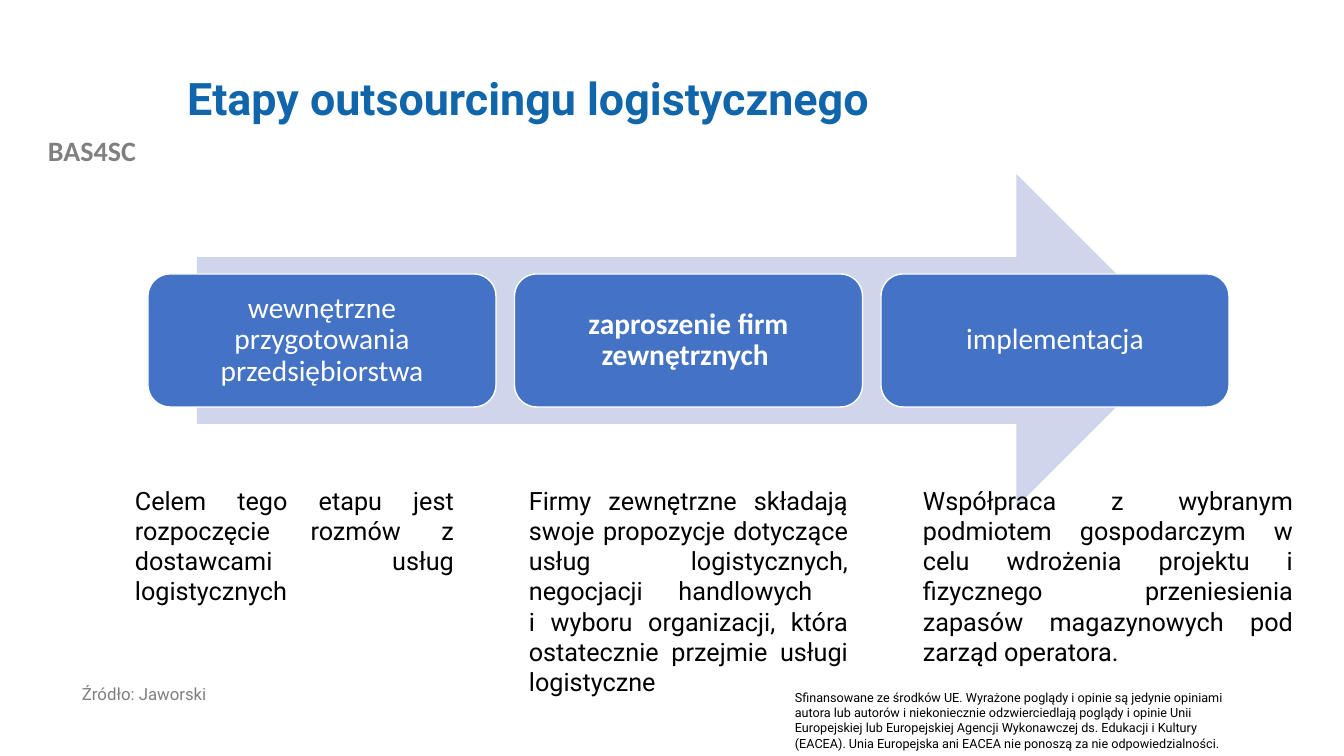
from pptx import Presentation
from pptx import util as u
from pptx.dml.color import RGBColor
from pptx.enum import shapes, text

TITLE = "Etapy outsourcingu logistycznego"
BRAND = "BAS4SC"
SOURCE = "Źródło: Jaworski"
FUNDING = (
    "Sfinansowane ze środków UE. Wyrażone poglądy i opinie są jedynie opiniami "
    "autora lub autorów i niekoniecznie odzwierciedlają poglądy i opinie Unii "
    "Europejskiej lub Europejskiej Agencji Wykonawczej ds. Edukacji i Kultury "
    "(EACEA). Unia Europejska ani EACEA nie ponoszą za nie odpowiedzialności."
)
STAGES = [
    ("wewnętrzne przygotowania przedsiębiorstwa", False,
     "Celem tego etapu jest rozpoczęcie rozmów z dostawcami usług logistycznych",
     339, 132),
    ("zaproszenie firm zewnętrznych ", True,
     "Firmy zewnętrzne składają swoje propozycje dotyczące usług logistycznych, "
     "negocjacji handlowych \vi wyboru organizacji, która ostatecznie przejmie "
     "usługi logistyczne",
     339, 224),
    ("implementacja", False,
     "Współpraca z wybranym podmiotem gospodarczym w celu wdrożenia projektu i "
     "fizycznego przeniesienia zapasów magazynowych pod zarząd operatora.",
     390, 194),
]
SCALE = 914400 / 100.8
LEFT, RIGHT, STEP_W = 148, 1229, 348
STEP_GAP = (RIGHT - LEFT - STEP_W * len(STAGES)) / (len(STAGES) - 1)
NOTE_LEFT, NOTE_PITCH = 125, 394
ALIGN = text.PP_ALIGN
SHAPE = shapes.MSO_SHAPE


def px(n):
    return u.Emu(round(n * SCALE))


def color(code):
    return RGBColor.from_string(code)


def write(item, words, size=18, face="Roboto", ink="000000", bold=False,
          align=ALIGN.LEFT, anchor=text.MSO_ANCHOR.TOP, lead=None, inset=None):
    frame = item.text_frame
    frame.word_wrap = True
    frame.auto_size = text.MSO_AUTO_SIZE.NONE
    frame.vertical_anchor = anchor
    if inset is not None:
        frame.margin_left = frame.margin_right = px(inset)
        frame.margin_top = frame.margin_bottom = px(inset)
    para = frame.paragraphs[0]
    para.text = words
    para.alignment = align
    para.space_before = u.Pt(0)
    if lead:
        para.line_spacing = lead
    for run in para.runs:
        run.font.size = u.Pt(size)
        run.font.name = face
        run.font.bold = bold
        run.font.color.rgb = color(ink)


def label(slide, box, words, **style):
    write(slide.shapes.add_textbox(*map(px, box)), words, **style)


def block(slide, kind, box, fill, edge=None):
    item = slide.shapes.add_shape(kind, *map(px, box))
    item.shadow.inherit = False
    item.fill.solid()
    item.fill.fore_color.rgb = color(fill)
    if edge:
        item.line.color.rgb = color(edge)
        item.line.width = u.Pt(1)
    else:
        item.line.fill.background()
    return item


def main():
    deck = Presentation()
    deck.slide_width, deck.slide_height = px(1344), px(756)
    slide = deck.slides.add_slide(deck.slide_layouts[5])

    title = slide.shapes.title
    title.left, title.top, title.width, title.height = map(px, (177, 40, 1075, 123))
    write(title, TITLE, size=32, ink="1065AB", bold=True, lead=0.9,
          anchor=text.MSO_ANCHOR.MIDDLE)

    label(slide, (0, 129, 184, 44), BRAND, size=20, face="Calibri",
          ink="808080", bold=True, align=ALIGN.CENTER)
    label(slide, (785, 685, 467, 72), FUNDING, size=9)
    label(slide, (72, 681, 505, 52), SOURCE, size=12, ink="7F7F7F", lead=0.9)

    block(slide, SHAPE.RIGHT_ARROW, (197, 174, 986, 333), "CFD5EA")
    for i, (name, bold, note, wide, high) in enumerate(STAGES):
        left = LEFT + i * (STEP_W + STEP_GAP)
        step = block(slide, SHAPE.ROUNDED_RECTANGLE, (left, 274, STEP_W, 133),
                     "4472C4", "FFFFFF")
        write(step, name, size=21, face="Calibri", ink="FFFFFF", bold=bold,
              align=ALIGN.CENTER, anchor=text.MSO_ANCHOR.MIDDLE, lead=0.9, inset=9)
        label(slide, (NOTE_LEFT + i * NOTE_PITCH, 480, wide, high), note,
              align=ALIGN.JUSTIFY)

    deck.save("out.pptx")


if __name__ == "__main__":
    main()
